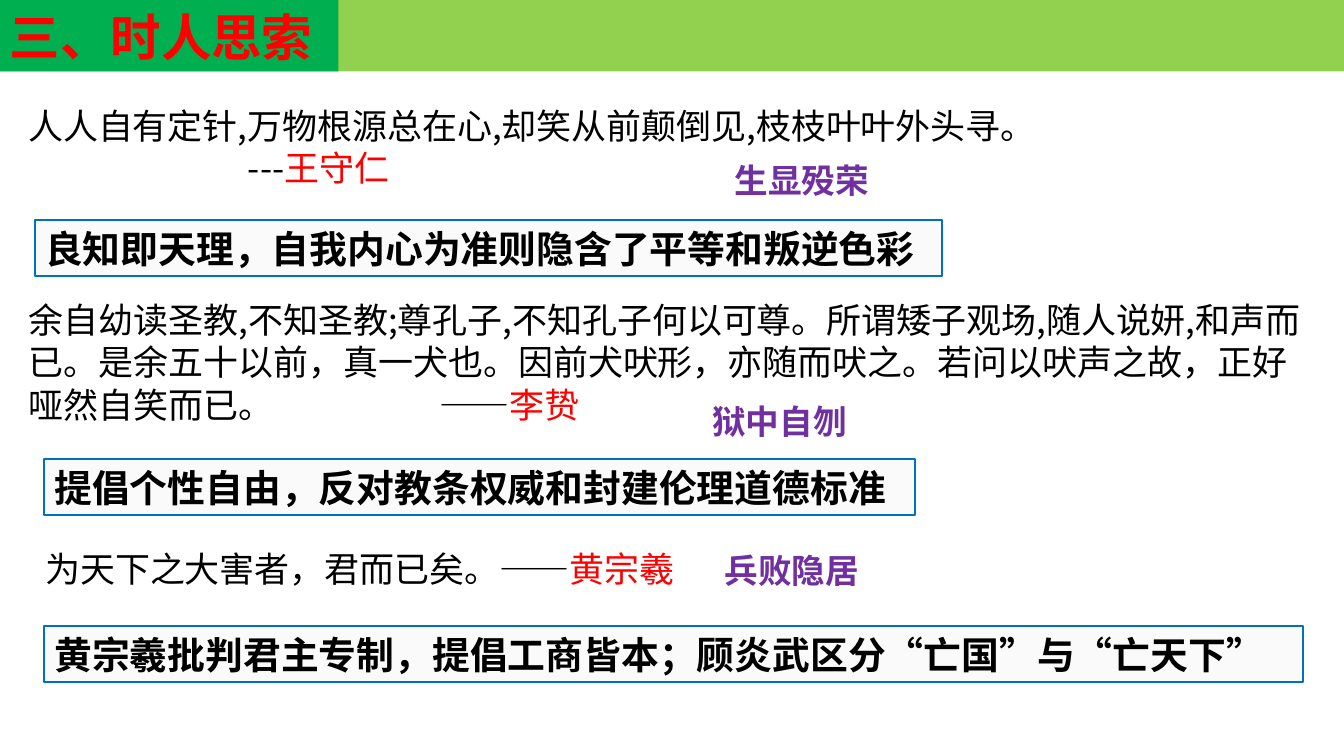
"""Build the slide on late Ming and early Qing thinkers."""
from pptx import Presentation
from pptx.dml.color import RGBColor as Rgb
from pptx.enum.shapes import MSO_SHAPE as Shape
from pptx.enum.text import MSO_ANCHOR as Anchor, MSO_AUTO_SIZE as AutoSize, PP_ALIGN as Align
from pptx.oxml.ns import qn
from pptx.util import Cm, Pt
from lxml.etree import SubElement

THEME = {
    "font": "Noto Sans CJK SC",
    "leading": 1.21,
    "page": (33.87, 19.05),
    "banner": "92D050",
    "frame_width": 1.5,
    "styles": {
        "title": {"size": 36, "bold": True, "color": "FF0000", "fill": "00B050"},
        "quote": {"size": 25, "bold": False, "color": "000000"},
        "thinker": {"size": 25, "bold": False, "color": "FF0000"},
        "view": {"size": 27, "bold": True, "color": "000000", "fill": "FAFAFA", "line": "0070C0"},
        "fate": {"size": 24, "bold": True, "color": "7030A0"},
    },
}

BANNER_HEIGHT = 1.8
TITLE = ("三、时人思索", (0, 0, 8.53, BANNER_HEIGHT))
QUOTES = [
    ((0.46, 2.49, 33.07, 2.39), [
        {"runs": [("人人自有定针,万物根源总在心,却笑从前颠倒见,枝枝叶叶外头寻。", "quote")]},
        {"runs": [("---", "quote"), ("王守仁", "thinker")], "indent": 5.54},
    ]),
    ((0.48, 7.39, 33.07, 3.45), [
        {"runs": [("余自幼读圣教,不知圣教;尊孔子,不知孔子何以可尊。所谓矮子观场,随人说妍,"
                   "和声而已。是余五十以前，真一犬也。因前犬吠形，亦随而吠之。若问以吠声之故，"
                   "正好哑然自笑而已。\t——", "quote"), ("李贽", "thinker")], "tab": 10.35},
    ]),
    ((0.89, 13.67, 17.37, 1.32), [
        {"runs": [("为天下之大害者，君而已矣。——", "quote"), ("黄宗羲", "thinker")]},
    ]),
]
VIEWS = [
    ("良知即天理，自我内心为准则隐含了平等和叛逆色彩", (0.89, 5.54, 22.86, 1.42)),
    ("提倡个性自由，反对教条权威和封建伦理道德标准", (1.12, 11.56, 21.95, 1.42)),
    ("黄宗羲批判君主专制，提倡工商皆本；顾炎武区分“亡国”与“亡天下”", (1.12, 15.77, 31.72, 1.42)),
]
FATES = [
    ("生显殁荣", (18.26, 3.89, 4.52, 1.27)),
    ("狱中自刎", (17.7, 9.96, 4.52, 1.27)),
    ("兵败隐居", (18.01, 13.72, 8.94, 1.27)),
]


def set_all(target, values):
    for name, value in values.items():
        setattr(target, name, value)


def add_run(paragraph, text, style):
    run = paragraph.add_run()
    run.text = text
    set_all(run.font, {"size": Pt(style["size"]), "bold": style["bold"], "name": THEME["font"]})
    run.font.color.rgb = Rgb.from_string(style["color"])
    properties = run.font._element
    properties.set("lang", "zh-CN")
    SubElement(properties, qn("a:ea")).set("typeface", THEME["font"])


def write(frame, paragraphs):
    set_all(frame, {"word_wrap": True, "auto_size": AutoSize.NONE, "vertical_anchor": Anchor.MIDDLE})
    for index, content in enumerate(paragraphs):
        paragraph = frame.add_paragraph() if index else frame.paragraphs[0]
        size = THEME["styles"][content["runs"][0][1]]["size"]
        set_all(paragraph, {"alignment": Align.LEFT, "line_spacing": Pt(size * THEME["leading"])})
        properties = paragraph._p.get_or_add_pPr()
        if "indent" in content:
            properties.set("marL", str(Cm(content["indent"])))
        if "tab" in content:
            stop = SubElement(SubElement(properties, qn("a:tabLst")), qn("a:tab"))
            stop.set("pos", str(Cm(content["tab"])))
            stop.set("algn", "l")
        for text, role in content["runs"]:
            add_run(paragraph, text, THEME["styles"][role])


def add_panel(slide, place, fill, line=None):
    panel = slide.shapes.add_shape(Shape.RECTANGLE, *map(Cm, place))
    panel.shadow.inherit = False
    panel.fill.solid()
    panel.fill.fore_color.rgb = Rgb.from_string(fill)
    if line:
        panel.line.color.rgb = Rgb.from_string(line)
        panel.line.width = Pt(THEME["frame_width"])
    else:
        panel.line.fill.background()
    return panel


def add_label(slide, text, place, role):
    style = THEME["styles"][role]
    if "fill" in style:
        label = add_panel(slide, place, style["fill"], style.get("line"))
    else:
        label = slide.shapes.add_textbox(*map(Cm, place))
    write(label.text_frame, [{"runs": [(text, role)]}])


def main():
    deck = Presentation()
    width, height = THEME["page"]
    set_all(deck, {"slide_width": Cm(width), "slide_height": Cm(height)})
    slide = deck.slides.add_slide(deck.slide_layouts[6])
    add_panel(slide, (0, 0, width, BANNER_HEIGHT), THEME["banner"])
    add_label(slide, *TITLE, "title")
    for place, paragraphs in QUOTES:
        write(slide.shapes.add_textbox(*map(Cm, place)).text_frame, paragraphs)
    for role, labels in (("view", VIEWS), ("fate", FATES)):
        for text, place in labels:
            add_label(slide, text, place, role)
    deck.save("out.pptx")


if __name__ == "__main__":
    main()
